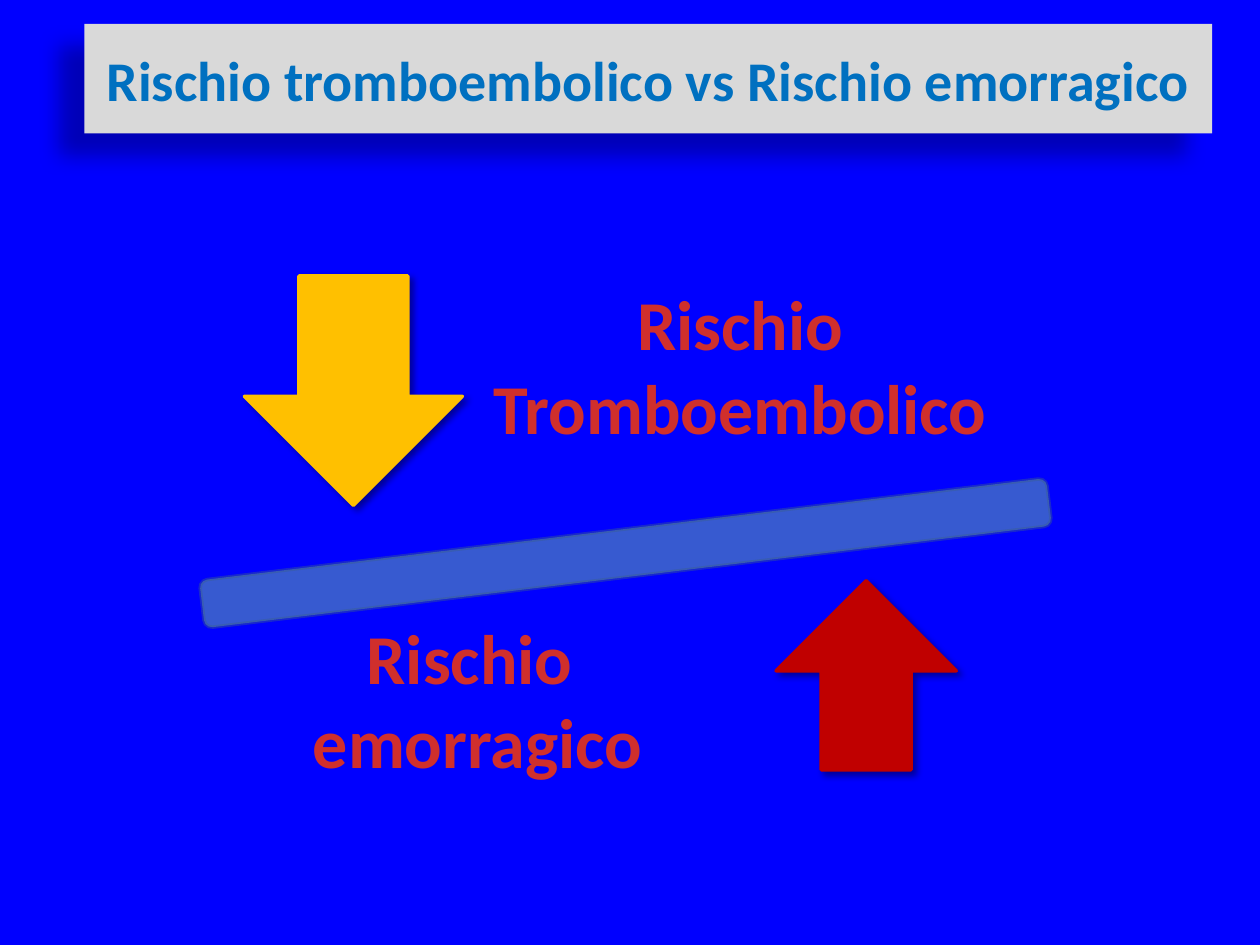
from lxml import etree
from pptx import Presentation
from pptx.dml.color import RGBColor
from pptx.enum.shapes import MSO_SHAPE
from pptx.enum.text import MSO_ANCHOR, MSO_AUTO_SIZE, PP_ALIGN
from pptx.oxml import parse_xml
from pptx.oxml.ns import nsdecls, qn
from pptx.util import Inches, Pt

RECT, BAR, ARROW = MSO_SHAPE.RECTANGLE, MSO_SHAPE.ROUNDED_RECTANGLE, MSO_SHAPE.DOWN_ARROW
CENTER, MIDDLE = PP_ALIGN.CENTER, MSO_ANCHOR.MIDDLE
GROW = MSO_AUTO_SIZE.SHAPE_TO_FIT_TEXT

THEME = {
    "font": "Calibri", "title_size": 32, "label_size": 40,
    "bg": "0000FF", "panel": "D9D9D9", "title": "0070C0",
    "bar": "4F81BD", "bar_line": "3A5F8C",
    "down": "FFC000", "up": "C00000",
    "label_stops": [(0, "FC7C7A"), (75, "D02F2C"), (100, "C70500")],
}

prs = Presentation()
prs.slide_width, prs.slide_height = Inches(10), Inches(7.5)
COL, ROW = prs.slide_width / 100, prs.slide_height / 75  # grid of 100 by 75 cells
s = prs.slides.add_slide(prs.slide_layouts[6])
s.background.fill.solid()
s.background.fill.fore_color.rgb = RGBColor.from_string(THEME["bg"])


def add_shape(kind, x, y, w, h, fill, line=None, shadow=None):
    """Add a filled shape; shadow is (opacity %, blur pt, distance pt, angle)."""
    sp = s.shapes.add_shape(kind, int(x * COL), int(y * ROW), int(w * COL), int(h * ROW))
    sp.shadow.inherit = False
    sp.fill.solid()
    sp.fill.fore_color.rgb = RGBColor.from_string(fill)
    if line:
        sp.line.color.rgb = RGBColor.from_string(line)
        sp.line.width = Pt(2)
    else:
        sp.line.fill.background()
    if shadow:
        opacity, blur, dist, angle = shadow
        sp._element.spPr.find(qn("a:effectLst")).append(parse_xml(
            f'<a:outerShdw {nsdecls("a")} blurRad="{Pt(blur)}" dist="{Pt(dist)}" '
            f'dir="{angle * 60000}" algn="ctr" rotWithShape="0"><a:srgbClr val="000000">'
            f'<a:alpha val="{opacity * 1000}"/></a:srgbClr></a:outerShdw>'))
    return sp


def write(p, text, size, color=None, stops=()):
    """Write a bold centred paragraph in one colour or a vertical gradient."""
    p.alignment = CENTER
    r = p.add_run()
    r.text = text
    r.font.name, r.font.size, r.font.bold = THEME["font"], Pt(size), True
    if color:
        r.font.color.rgb = RGBColor.from_string(color)
    if stops:
        gs = "".join(f'<a:gs pos="{pos * 1000}"><a:srgbClr val="{c}"/></a:gs>' for pos, c in stops)
        r._r.get_or_add_rPr().insert(0, parse_xml(
            f'<a:gradFill {nsdecls("a")}><a:gsLst>{gs}</a:gsLst>'
            '<a:lin ang="5400000" scaled="0"/></a:gradFill>'))


# Title panel
sp = add_shape(RECT, 6.7, 1.9, 89.5, 8.7, THEME["panel"], shadow=(28, 11.8, 19.7, 141))
tf = sp.text_frame
tf.word_wrap, tf.vertical_anchor = True, MIDDLE
write(tf.paragraphs[0], "Rischio tromboembolico vs Rischio emorragico",
      THEME["title_size"], color=THEME["title"])

# Tilted beam, translucent in fill and outline
sp = add_shape(BAR, 15.8, 42, 67.7, 3.8, THEME["bar"], THEME["bar_line"])
sp.rotation = 353.1
for clr, opacity in zip(sp._element.spPr.iter(qn("a:srgbClr")), (70, 42)):
    etree.SubElement(clr, qn("a:alpha")).set("val", str(opacity * 1000))

# Arrows pressing on the beam
for x, y, w, h, color, flipped in (
    (19.4, 21.9, 17.3, 18.2, THEME["down"], False),
    (61.6, 46.1, 14.3, 15, THEME["up"], True),
):
    sp = add_shape(ARROW, x, y, w, h, color, color, shadow=(40, 4, 3, 45))
    if flipped:
        sp._element.spPr.xfrm.set("flipV", "1")

# Risk labels
for x, y, w, lines in (
    (33.6, 21.8, 50.3, ("Rischio", "Tromboembolico")),
    (20.7, 48.3, 34.4, ("Rischio ", "emorragico")),
):
    tf = s.shapes.add_textbox(int(x * COL), int(y * ROW), int(w * COL), int(17.5 * ROW)).text_frame
    tf.word_wrap, tf.auto_size = False, GROW
    for i, text in enumerate(lines):
        p = tf.add_paragraph() if i else tf.paragraphs[0]
        write(p, text, THEME["label_size"], stops=THEME["label_stops"])

prs.save("out.pptx")
